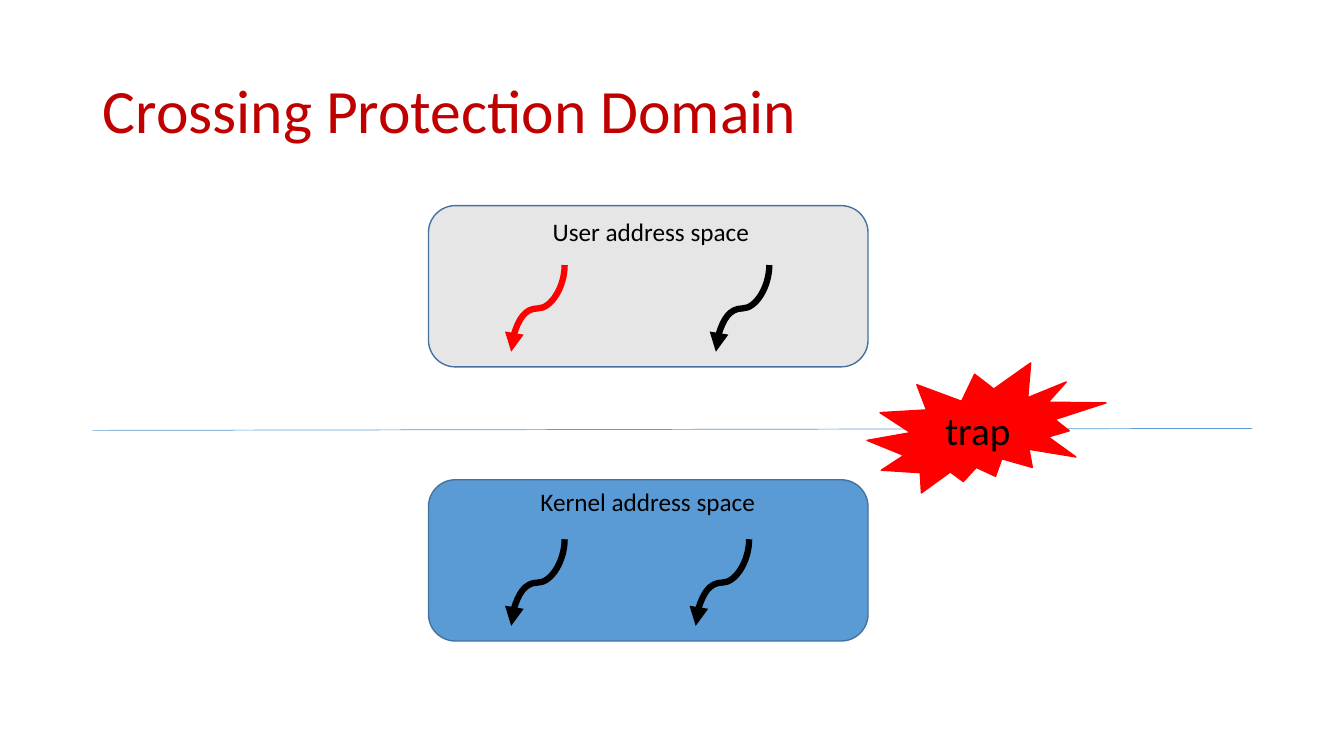
import pptx
import pptx.util
import pptx.dml.color
import pptx.enum.shapes
import pptx.enum.text
import pptx.oxml.ns
from dataclasses import dataclass
from lxml import etree

Inches = pptx.util.Inches
Pt = pptx.util.Pt
SHAPE = pptx.enum.shapes.MSO_SHAPE
CONNECTOR = pptx.enum.shapes.MSO_CONNECTOR
ANCHOR = pptx.enum.text.MSO_ANCHOR
ALIGN = pptx.enum.text.PP_ALIGN
qn = pptx.oxml.ns.qn


@dataclass(frozen=True)
class Theme:
    """Colours, font and type sizes of the slide."""
    font: str = "Calibri"
    title: str = "C00000"
    ink: str = "000000"
    alert: str = "FF0000"
    user: str = "E7E6E6"
    kernel: str = "5B9BD5"
    border: str = "43739E"
    title_size: int = 44
    trap_size: int = 28
    label_size: int = 18


THEME = Theme()


def rgb(value):
    """Turn a hex string into a colour."""
    return pptx.dml.color.RGBColor.from_string(value)


def write(sp, text, size, color, align, anchor):
    """Put one formatted paragraph into a shape."""
    tf = sp.text_frame
    tf.word_wrap = True
    tf.vertical_anchor = anchor
    tf.text = text
    p = tf.paragraphs[0]
    p.alignment = align
    font = p.runs[0].font
    font.name, font.size = THEME.font, Pt(size)
    font.color.rgb = rgb(color)


def add_block(s, kind, box, fill, border):
    """Draw a filled, outlined preset shape in the box."""
    sp = s.shapes.add_shape(kind, *map(Inches, box))
    sp.shadow.inherit = False
    sp.fill.solid()
    sp.fill.fore_color.rgb = rgb(fill)
    sp.line.color.rgb = rgb(border)
    sp.line.width = Pt(1)
    return sp


def add_line(s, kind, ends, color, width):
    """Draw a connector without shadow between two points."""
    line = s.shapes.add_connector(kind, *map(Inches, ends))
    line.line.color.rgb = rgb(color)
    line.line.width = Pt(width)
    etree.SubElement(line._element.spPr, qn("a:effectLst"))
    return line


def add_thread(s, left, top, color):
    """Draw a curved thread arrow falling from upper right to lower left."""
    width, height = 0.53, 0.86
    x = left + (width - height) / 2
    y = top + (height - width) / 2
    line = add_line(s, CONNECTOR.CURVE, (x, y, x + height, y + width), color, 4.5)
    line._element.spPr.find(qn("a:xfrm")).set("rot", str(90 * 60000))
    ln = line.line._get_or_add_ln()
    etree.SubElement(ln, qn("a:tailEnd"), type="triangle")


def add_title(s, box, text):
    """Place and format the title placeholder."""
    sp = s.shapes.title
    sp.left, sp.top, sp.width, sp.height = map(Inches, box)
    write(sp, text, THEME.title_size, THEME.title, ALIGN.LEFT, ANCHOR.MIDDLE)
    sp.text_frame.paragraphs[0].line_spacing = 0.9


def add_space(s, box, fill, label, offset, threads):
    """Draw an address space with its label and threads given as (dx, colour)."""
    left, top, width, height = box
    add_block(s, SHAPE.ROUNDED_RECTANGLE, box, fill, THEME.border)
    dx, dy = offset
    sp = s.shapes.add_textbox(*map(Inches, (left + dx, top + dy, 2.77, 0.4)))
    write(sp, label, THEME.label_size, THEME.ink, ALIGN.CENTER, ANCHOR.TOP)
    for thread_dx, color in threads:
        add_thread(s, left + thread_dx, top + 0.59, color)


def add_trap(s, box):
    """Draw the trap burst."""
    sp = add_block(s, SHAPE.EXPLOSION2, box, THEME.alert, THEME.alert)
    write(sp, "trap", THEME.trap_size, THEME.ink, ALIGN.CENTER, ANCHOR.MIDDLE)


def main():
    """Build and save the slide."""
    prs = pptx.Presentation()
    prs.slide_width, prs.slide_height = Inches(13.33), Inches(7.5)
    s = prs.slides.add_slide(prs.slide_layouts[5])
    add_title(s, (0.92, 0.4, 11.5, 1.45), "Crossing Protection Domain")
    add_line(s, CONNECTOR.STRAIGHT, (0.92, 4.27, 12.42, 4.25), THEME.kernel, 0.5)
    add_space(s, (4.25, 2.04, 4.36, 1.6), THEME.user, "User address space",
              (0.82, 0.06), [(0.82, THEME.alert), (2.85, THEME.ink)])
    add_space(s, (4.25, 4.76, 4.36, 1.6), THEME.kernel, "Kernel address space",
              (0.79, 0.02), [(0.82, THEME.ink), (2.65, THEME.ink)])
    add_trap(s, (8.6, 3.6, 2.37, 1.29))
    prs.save("out.pptx")


if __name__ == "__main__":
    main()
